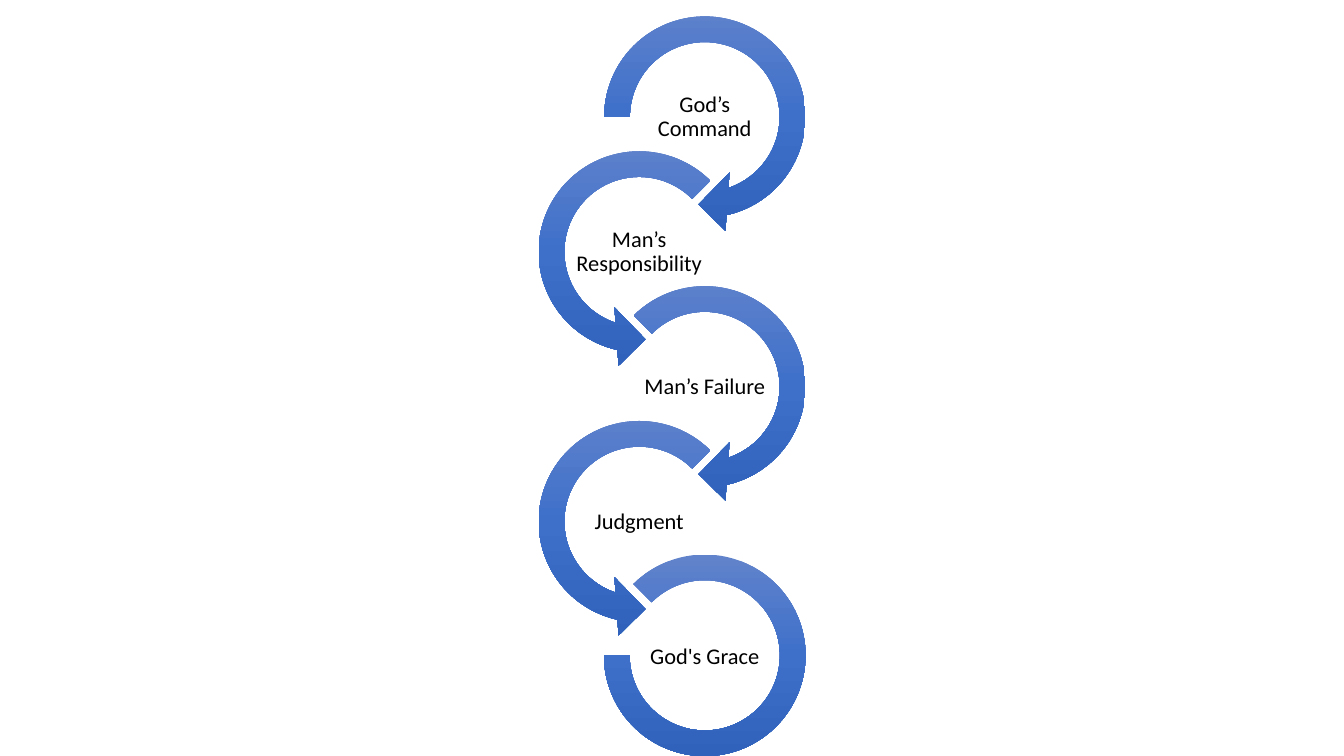
from copy import deepcopy
from dataclasses import dataclass

from pptx import Presentation
from pptx.dml.color import RGBColor
from pptx.enum.shapes import MSO_SHAPE as Shape
from pptx.enum.text import MSO_ANCHOR as Anchor, PP_ALIGN as Align
from pptx.oxml.ns import qn
from pptx.util import Inches, Pt

COLORS = {"light": "6183CB", "mid": "3E70CA", "dark": "3062BB", "text": "000000"}
GRADIENT = [(0, "light"), (0.5, "mid"), (1, "dark")]
COLUMNS = {"left": 5.18, "right": 5.83}
ROW = 1.338
LABEL_W, LABEL_H = 1.3, 0.65
LABEL_DX, LABEL_DY = 0.51, 0.84
INSET = Inches(0.01)


@dataclass(frozen=True)
class Ring:
    """Ring outline: its preset, size, offset in the grid cell and adjustments."""
    preset: Shape
    size: float
    dx: float
    dy: float
    adjustments: tuple[float, ...]


@dataclass(frozen=True)
class Step:
    label: str
    column: str
    ring: Ring


def arrow(preset: Shape, head: float, tail: float) -> Ring:
    return Ring(preset, 2.32, 0, 0, (0.1098, 11.42322, head, tail, 0.125))


FIRST = arrow(Shape.CIRCULAR_ARROW, 45, 108)
TO_LEFT = arrow(Shape.CIRCULAR_ARROW, 45, 135)
TO_RIGHT = arrow(Shape.LEFT_CIRCULAR_ARROW, 63, 189)
LAST = Ring(Shape.BLOCK_ARC, 2, 0.16, 0.15, (135, 108, 0.1274))

STEPS = [
    Step("God’s Command", "right", FIRST),
    Step("Man’s Responsibility", "left", TO_RIGHT),
    Step("Man’s Failure", "right", TO_LEFT),
    Step("Judgment", "left", TO_RIGHT),
    Step("God's Grace", "right", LAST),
]


def fill_gradient(sp) -> None:
    fill = sp.fill
    fill.gradient()
    fill.gradient_angle = 270
    stop_list = sp._element.spPr.find(qn("a:gradFill")).find(qn("a:gsLst"))
    stop_list.append(deepcopy(stop_list[0]))
    for stop, (position, color) in zip(fill.gradient_stops, GRADIENT):
        stop.position = position
        stop.color.rgb = RGBColor.from_string(COLORS[color])


def add_ring(s, ring: Ring, x: float, y: float) -> None:
    sp = s.shapes.add_shape(ring.preset, Inches(x + ring.dx), Inches(y + ring.dy),
                            Inches(ring.size), Inches(ring.size))
    for i, value in enumerate(ring.adjustments):
        sp.adjustments[i] = value
    fill_gradient(sp)
    sp.line.fill.background()
    sp.shadow.inherit = False


def set_all(target, formats: dict) -> None:
    for name, value in formats.items():
        setattr(target, name, value)


def add_label(s, text: str, x: float, y: float) -> None:
    tf = s.shapes.add_textbox(Inches(x + LABEL_DX), Inches(y + LABEL_DY),
                              Inches(LABEL_W), Inches(LABEL_H)).text_frame
    set_all(tf, {"word_wrap": True, "vertical_anchor": Anchor.MIDDLE,
                 "margin_left": INSET, "margin_right": INSET,
                 "margin_top": INSET, "margin_bottom": INSET})
    p = tf.paragraphs[0]
    set_all(p, {"alignment": Align.CENTER, "line_spacing": 0.9})
    r = p.add_run()
    r.text = text
    set_all(r.font, {"name": "Calibri", "size": Pt(16)})
    r.font.color.rgb = RGBColor.from_string(COLORS["text"])


def main() -> None:
    prs = Presentation()
    prs.slide_width, prs.slide_height = Inches(13.33), Inches(7.5)
    s = prs.slides.add_slide(prs.slide_layouts[6])
    for row, step in enumerate(STEPS):
        x, y = COLUMNS[step.column], row * ROW
        add_ring(s, step.ring, x, y)
        add_label(s, step.label, x, y)
    prs.save("out.pptx")


if __name__ == "__main__":
    main()
